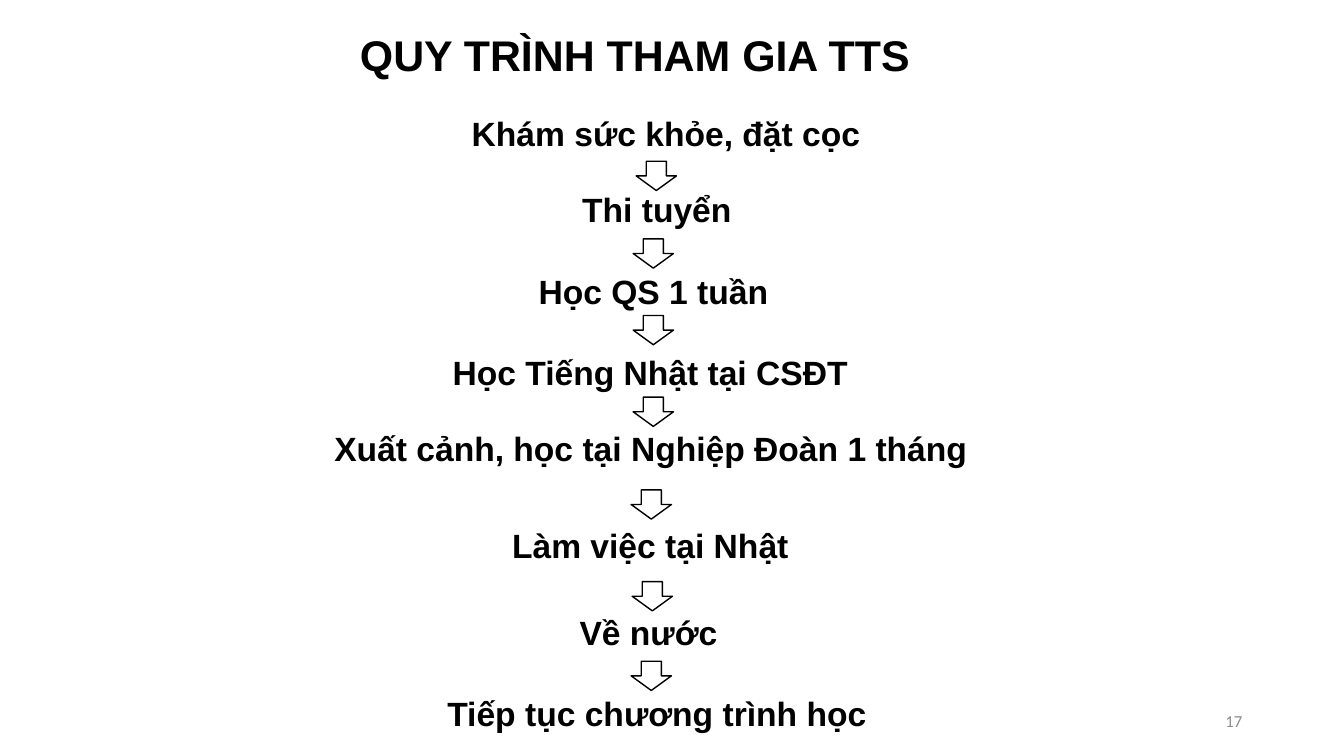
"""Builds the slide that shows the trainee programme as a vertical process."""
import dataclasses

import pptx
import pptx.dml.color
import pptx.enum.shapes
import pptx.enum.text
import pptx.util

Inches = pptx.util.Inches
ALIGN = pptx.enum.text.PP_ALIGN
ANCHOR = pptx.enum.text.MSO_ANCHOR


@dataclasses.dataclass(frozen=True)
class Theme:
    ink: str = "000000"
    muted: str = "8C8C8C"
    heading_font: str = "Arial"
    number_font: str = "Calibri"
    title_size: float = 30.6
    step_size: float = 24
    number_size: float = 12
    outline: float = 1


def apply_format(target, values):
    for name, value in values.items():
        setattr(target, name, value)


class SlideBuilder:
    def __init__(self, slide, theme):
        self.slide = slide
        self.theme = theme

    def fill_text(self, shape, text, font, size, color, bold, frame_format, paragraph_format):
        frame = shape.text_frame
        apply_format(frame, {"word_wrap": True, **frame_format})
        paragraph = frame.paragraphs[0]
        paragraph.text = text
        apply_format(paragraph, paragraph_format)
        apply_format(paragraph.font, {"name": font, "size": pptx.util.Pt(size), "bold": bold})
        paragraph.font.color.rgb = pptx.dml.color.RGBColor.from_string(color)

    def title(self, text, left, top, width, height):
        shape = self.slide.shapes.title
        apply_format(shape, {"left": Inches(left), "top": Inches(top),
                             "width": Inches(width), "height": Inches(height)})
        self.fill_text(shape, text, self.theme.heading_font, self.theme.title_size,
                       self.theme.ink, True,
                       {"vertical_anchor": ANCHOR.BOTTOM,
                        "auto_size": pptx.enum.text.MSO_AUTO_SIZE.NONE},
                       {"alignment": ALIGN.LEFT, "line_spacing": 0.7})

    def text_box(self, left, top, width, height):
        return self.slide.shapes.add_textbox(
            Inches(left), Inches(top), Inches(width), Inches(height))

    def step(self, text, left, top, width, alignment):
        self.fill_text(self.text_box(left, top, width, 0.5), text, self.theme.heading_font,
                       self.theme.step_size, self.theme.ink, True,
                       {"vertical_anchor": ANCHOR.TOP}, {"alignment": alignment})

    def arrow(self, center, top):
        width, height = 0.4, 0.29
        shape = self.slide.shapes.add_shape(
            pptx.enum.shapes.MSO_SHAPE.DOWN_ARROW, Inches(center - width / 2),
            Inches(top), Inches(width), Inches(height))
        shape.shadow.inherit = False
        shape.fill.background()
        shape.line.color.rgb = pptx.dml.color.RGBColor.from_string(self.theme.ink)
        shape.line.width = pptx.util.Pt(self.theme.outline)

    def slide_number(self, text):
        self.fill_text(self.text_box(9.42, 6.95, 3, 0.4), text, self.theme.number_font,
                       self.theme.number_size, self.theme.muted, False,
                       {"vertical_anchor": ANCHOR.MIDDLE}, {"alignment": ALIGN.RIGHT})


STEPS = [
    ("Khám sức khỏe, đặt cọc", 4.26, 1.07, 4.69, ALIGN.CENTER),
    ("Thi tuyển", 5.36, 1.83, 2.31, ALIGN.CENTER),
    ("Học QS 1 tuần", 5.22, 2.64, 2.52, ALIGN.CENTER),
    ("Học Tiếng Nhật tại CSĐT", 4.39, 3.44, 4.64, ALIGN.LEFT),
    ("Xuất cảnh, học tại Nghiệp Đoàn 1 tháng", 2.96, 4.2, 6.99, ALIGN.CENTER),
    ("Làm việc tại Nhật", 4.65, 5.16, 3.6, ALIGN.CENTER),
    ("Về nước", 5.65, 6.02, 1.9, ALIGN.LEFT),
    ("Tiếp tục chương trình học", 4.17, 6.83, 4.69, ALIGN.CENTER),
]
ARROWS = [(6.51, 1.6), (6.48, 2.37), (6.48, 3.13), (6.48, 3.94),
          (6.46, 4.86), (6.47, 5.77), (6.46, 6.56)]


def main():
    presentation = pptx.Presentation()
    apply_format(presentation, {"slide_width": Inches(13.33), "slide_height": Inches(7.5)})
    slide = presentation.slides.add_slide(presentation.slide_layouts[5])
    builder = SlideBuilder(slide, Theme())
    builder.title("QUY TRÌNH THAM GIA TTS", 3.47, 0.36, 6.15, 0.47)
    for step in STEPS:
        builder.step(*step)
    for arrow in ARROWS:
        builder.arrow(*arrow)
    builder.slide_number("17")
    presentation.save("out.pptx")


if __name__ == "__main__":
    main()
